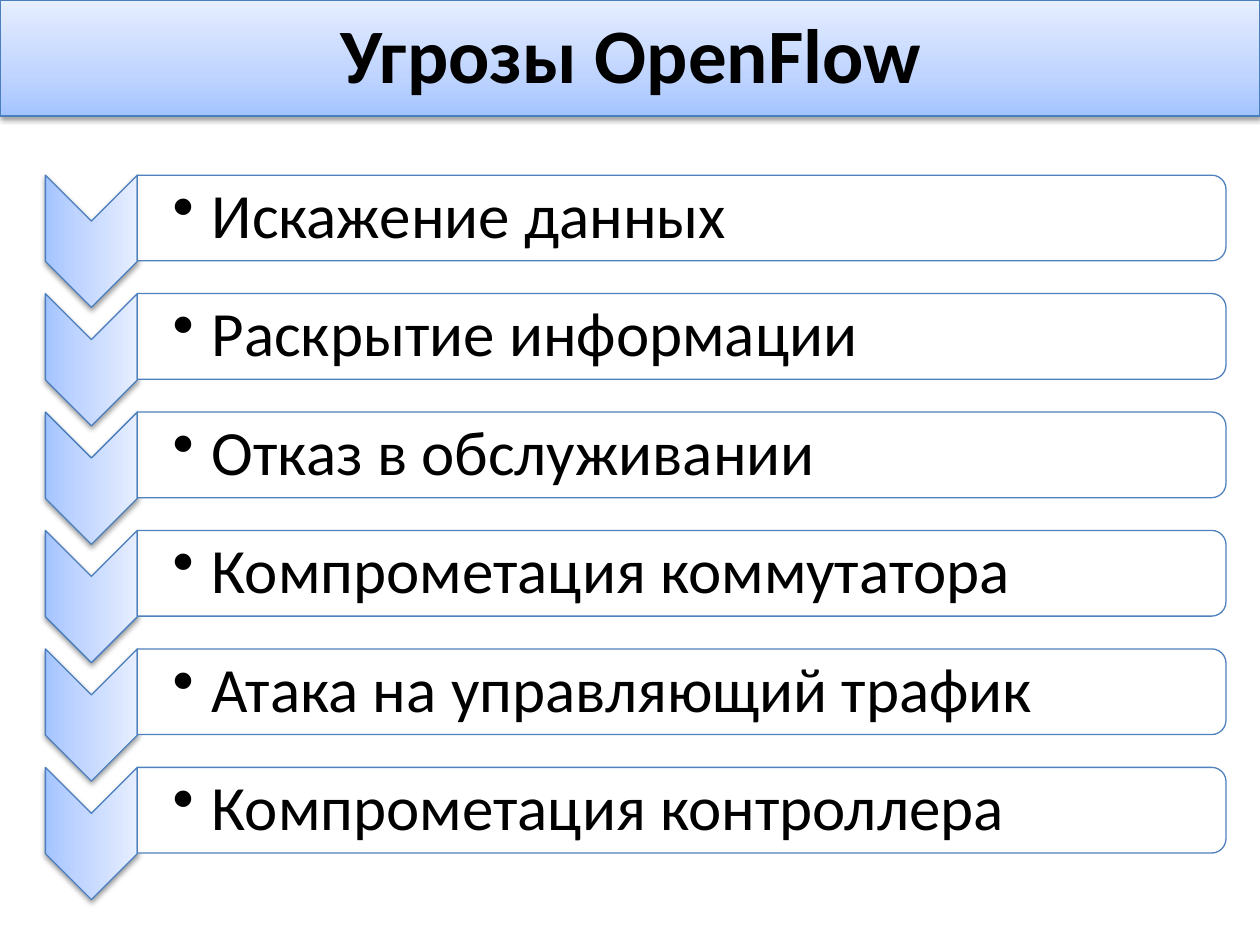
from copy import deepcopy

from lxml.etree import SubElement
from pptx import Presentation
from pptx.dml.color import RGBColor
from pptx.enum.shapes import MSO_SHAPE as Shape
from pptx.enum.text import MSO_ANCHOR as Anchor, PP_ALIGN as Align
from pptx.oxml.ns import qn
from pptx.util import Inches, Pt

THREATS = [
    "Искажение данных",
    "Раскрытие информации",
    "Отказ в обслуживании",
    "Компрометация коммутатора",
    "Атака на управляющий трафик",
    "Компрометация контроллера",
]
FIRST_TOP, ROW_STEP = 1.39, 0.94


def color(value):
    return RGBColor.from_string(value)


def assign(target, values):
    for name, value in values.items():
        setattr(target, name, value)


class ThreatSlide:
    """Holds the style and the current slide and draws its elements."""

    font = "Calibri"
    ink = "000000"
    stops = [(0, "A4C4FF"), (0.35, "BFD4FF"), (1, "E6EEFF")]
    place_names = ("left", "top", "width", "height")

    def __init__(self, deck):
        self.page = deck.slides.add_slide(deck.slide_layouts[5])

    def add_text(self, frame, text, size, bold=False, **insets):
        assign(frame, {"word_wrap": True, "vertical_anchor": Anchor.MIDDLE, **insets})
        para = frame.paragraphs[0]
        span = para.add_run()
        span.text = text
        assign(span.font, {"name": self.font, "size": Pt(size), "bold": bold})
        span.font.color.rgb = color(self.ink)
        return para

    def title(self, text, *place):
        box = self.page.shapes.title
        assign(box, dict(zip(self.place_names, map(Inches, place))))
        self.add_text(box.text_frame, text, 44, bold=True).alignment = Align.CENTER
        self.page.shapes._spTree.append(box._element)

    def outline(self, kind, line, left, top, width, height, turned=False):
        if turned:
            left, top = left + (width - height) / 2, top + (height - width) / 2
            width, height = height, width
        box = self.page.shapes.add_shape(kind, *map(Inches, (left, top, width, height)))
        box.rotation = 90 if turned else 0
        box.shadow.inherit = False
        box.line.color.rgb = color(line)
        box.line.width = Pt(0.75)
        return box

    def glossy(self, kind, *place, turned=False):
        box = self.outline(kind, "4B7EBC", *place, turned=turned)
        box.fill.gradient()
        box.fill.gradient_angle = 90
        properties = box._element.spPr
        stop_list = properties.find(".//" + qn("a:gsLst"))
        stop_list.append(deepcopy(stop_list[0]))
        for stop, (position, value) in zip(box.fill.gradient_stops, self.stops):
            stop.position = position
            stop.color.rgb = color(value)
        shadow = SubElement(properties.find(qn("a:effectLst")), qn("a:outerShdw"),
                            blurRad=str(Pt(3.1)), dist=str(Pt(1.6)),
                            dir="5400000", rotWithShape="0")
        shade = SubElement(shadow, qn("a:srgbClr"), val=self.ink)
        SubElement(shade, qn("a:alpha"), val="38000")

    def panel(self, *place):
        box = self.outline(Shape.ROUND_2_SAME_RECTANGLE, "4F81BD", *place, turned=True)
        box.fill.solid()
        box.fill.fore_color.rgb = color("FFFFFF")
        fill = box._element.spPr.find(qn("a:solidFill"))
        SubElement(fill[0], qn("a:alpha"), val="90000")

    def bullet(self, text, *place):
        box = self.page.shapes.add_textbox(*map(Inches, place))
        edge = Inches(0.03)
        para = self.add_text(box.text_frame, text, 36, margin_left=Inches(0.28),
                             margin_top=edge, margin_right=edge, margin_bottom=edge)
        assign(para, {"level": 1, "line_spacing": 0.9, "space_after": Pt(5.4)})
        properties = para._p.get_or_add_pPr()
        properties.set("marL", str(Inches(0.31)))
        properties.set("indent", str(-Inches(0.31)))
        SubElement(properties, qn("a:buChar"), char="•")

    def threat(self, text, top):
        self.glossy(Shape.CHEVRON, 0.36, top, 0.73, 1.05, turned=True)
        self.panel(1.09, top, 8.64, 0.68)
        self.bullet(text, 1.09, top + 0.03, 8.61, 0.62)


def main():
    deck = Presentation()
    assign(deck, {"slide_width": Inches(10), "slide_height": Inches(7.5)})
    slide = ThreatSlide(deck)
    slide.glossy(Shape.RECTANGLE, 0, 0, 10, 0.92)
    slide.title("Угрозы OpenFlow", 0.51, 0, 9, 0.84)
    for row, text in enumerate(THREATS):
        slide.threat(text, FIRST_TOP + row * ROW_STEP)
    deck.save("out.pptx")


if __name__ == "__main__":
    main()
